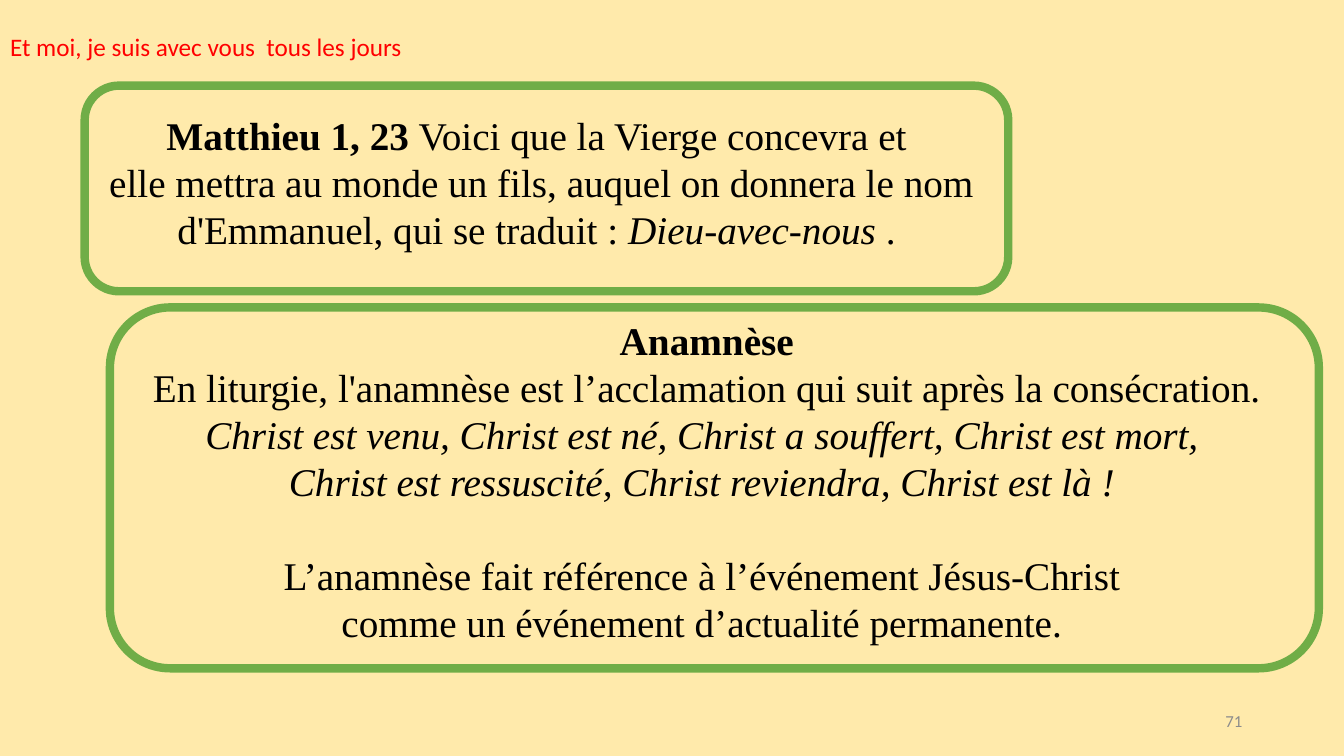
from pptx import Presentation
from pptx.dml.color import RGBColor
from pptx.enum.shapes import MSO_SHAPE
from pptx.enum.text import MSO_ANCHOR, PP_ALIGN
from pptx.util import Inches, Pt

# Content: each paragraph is a list of (text, style) runs
TITLE = "Et moi, je suis avec vous  tous les jours"
PAGE_NUMBER = "71"
VERSE = [
    [("Matthieu 1, 23 ", "bold"), ("Voici que la Vierge concevra et ", "")],
    [("elle mettra au monde un fils, auquel on donnera le nom "
      "d'Emmanuel, qui se traduit : ", ""),
     ("Dieu-avec-nous", "italic"), (" . ", "")],
]
ANAMNESIS = [
    [("Anamnèse", "bold")],
    [("En liturgie, l'anamnèse est l’acclamation qui suit après la consécration.", "")],
    [("Christ est venu, Christ est né, Christ a souffert, Christ est mort, ", "italic")],
    [("Christ est ressuscité, Christ reviendra, Christ est là ! ", "italic")],
    [("L’anamnèse fait référence à l’événement Jésus-Christ ", "")],
    [("comme un événement d’actualité permanente. ", "")],
]
# (paragraphs, frame box, text box, index of the paragraph set apart by a gap)
PANELS = [
    (VERSE, (0.84, 0.85, 9.16, 2.04), (0.93, 1.05, 8.88, 1.51), None),
    (ANAMNESIS, (1.09, 3.05, 11.99, 3.58), (1.28, 3.09, 11.46, 3.4), 4),
]
BODY_SIZE = 28
LINE_HEIGHT = 1.2 * BODY_SIZE


def color(hex_string):
    return RGBColor.from_string(hex_string)


def inches(box):
    return [Inches(length) for length in box]


def format_font(font, name, size, hex_string):
    font.name, font.size = name, Pt(size)
    font.color.rgb = color(hex_string)


def set_line(text_frame, text, size, hex_string, alignment, anchor):
    text_frame.text = text
    text_frame.vertical_anchor = anchor
    paragraph = text_frame.paragraphs[0]
    paragraph.alignment = alignment
    format_font(paragraph.runs[0].font, "Calibri", size, hex_string)


def add_panel(slide, paragraphs, frame_box, text_box, gap_index):
    group = slide.shapes.add_group_shape()
    # Green rounded frame
    frame = group.shapes.add_shape(MSO_SHAPE.ROUNDED_RECTANGLE, *inches(frame_box))
    frame.shadow.inherit = False
    frame.fill.background()
    frame.line.color.rgb = color("70AD47")
    frame.line.width = Pt(6)
    # Centred text
    text_frame = group.shapes.add_textbox(*inches(text_box)).text_frame
    text_frame.word_wrap = True
    for index, runs in enumerate(paragraphs):
        paragraph = text_frame.add_paragraph() if index else text_frame.paragraphs[0]
        paragraph.alignment = PP_ALIGN.CENTER
        paragraph.line_spacing = 1.0
        if index == gap_index:
            paragraph.space_before = Pt(LINE_HEIGHT)
        for text, style in runs:
            run = paragraph.add_run()
            run.text = text
            format_font(run.font, "Times New Roman", BODY_SIZE, "000000")
            run.font.bold = style == "bold"
            run.font.italic = style == "italic"


def main():
    presentation = Presentation()
    presentation.slide_width, presentation.slide_height = inches((13.33, 7.5))
    slide = presentation.slides.add_slide(presentation.slide_layouts[5])
    slide.background.fill.solid()
    slide.background.fill.fore_color.rgb = color("FFEAAB")

    # Title
    title = slide.shapes.title
    title.left, title.top, title.width, title.height = inches((0, 0.26, 4.28, 0.4))
    set_line(title.text_frame, TITLE, 18, "FF0000", PP_ALIGN.LEFT, MSO_ANCHOR.TOP)

    # Framed panels
    for panel in PANELS:
        add_panel(slide, *panel)

    # Page number
    number = slide.shapes.add_textbox(*inches((9.42, 6.95, 3, 0.4)))
    set_line(number.text_frame, PAGE_NUMBER, 12, "8C8C8C", PP_ALIGN.RIGHT, MSO_ANCHOR.MIDDLE)

    presentation.save("out.pptx")


if __name__ == "__main__":
    main()
